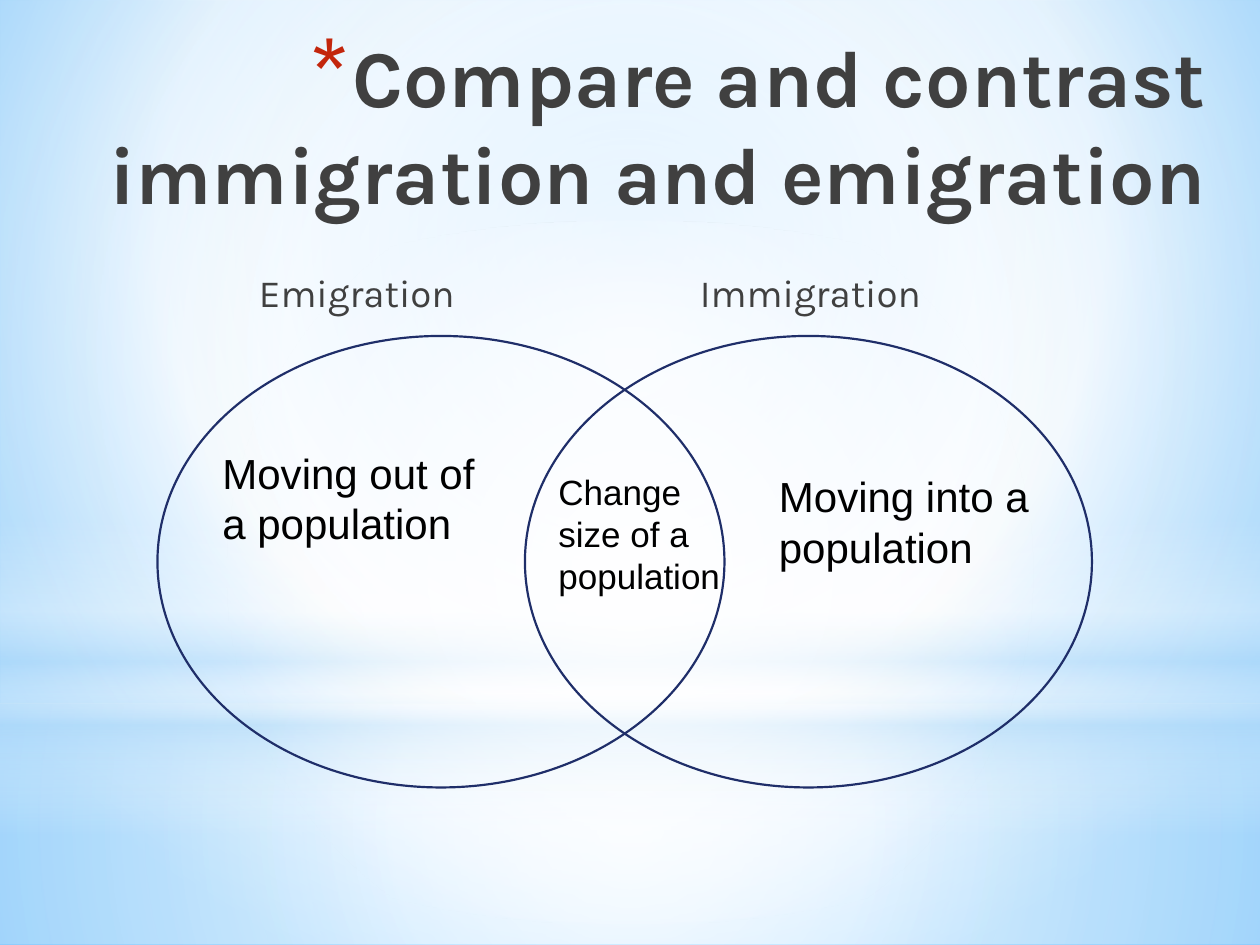
from lxml import etree
from pptx import Presentation
from pptx.dml.color import RGBColor
from pptx.enum import shapes, text
from pptx.oxml.ns import qn
from pptx.util import Pt

WHITE = RGBColor(0xFF, 0xFF, 0xFF)
SKY = RGBColor(0x9E, 0xD5, 0xFF)
BLUE = RGBColor(0x5B, 0xB9, 0xFF)
PALE = RGBColor(0xB4, 0xDC, 0xFA)
NAVY = RGBColor(0x1F, 0x2E, 0x69)
GRAY = RGBColor(0x40, 0x40, 0x40)
RED = RGBColor(0xC3, 0x26, 0x0C)
BLACK = RGBColor(0, 0, 0)

CENTER = (50, 50, 50, 50)


def child(parent, tag, **attributes):
    return etree.SubElement(parent, qn(tag), {k: str(v) for k, v in attributes.items()})


def set_gradient(properties, stops, focus=None):
    """Swap the solid fill for a gradient: round about focus, else top to bottom."""
    solid = properties.find(qn("a:solidFill"))
    gradient = etree.Element(qn("a:gradFill"), rotWithShape="1")
    stop_list = child(gradient, "a:gsLst")
    for position, color, opacity in stops:
        stop = child(stop_list, "a:gs", pos=position * 1000)
        color_element = child(stop, "a:srgbClr", val=color)
        if opacity < 100:
            child(color_element, "a:alpha", val=opacity * 1000)
    if focus:
        path = child(gradient, "a:path", path="circle")
        sides = {side: value * 1000 for side, value in zip("ltrb", focus)}
        child(path, "a:fillToRect", **sides)
    else:
        child(gradient, "a:lin", ang=90 * 60000, scaled=0)
    properties.replace(solid, gradient)


def add_glow(slide, kind, box, stops, focus=None):
    shape = slide.shapes.add_shape(kind, *map(Pt, box))
    shape.shadow.inherit = False
    shape.line.fill.background()
    shape.fill.solid()
    set_gradient(shape.element.spPr, stops, focus)


def add_text(slide, box, content, size, font, color, bold=False):
    shape = slide.shapes.add_textbox(*map(Pt, box))
    frame = shape.text_frame
    frame.word_wrap = True
    frame.text = content
    run_font = frame.paragraphs[0].runs[0].font
    run_font.size, run_font.name, run_font.bold = Pt(size), font, bold
    run_font.color.rgb = color
    return frame


def add_backdrop(slide, width, height):
    rectangle, oval = shapes.MSO_SHAPE.RECTANGLE, shapes.MSO_SHAPE.OVAL
    horizon = 402

    slide.background.fill.solid()
    background = slide.element.find(".//" + qn("p:bgPr"))
    set_gradient(background, [(0, SKY, 100), (60, WHITE, 100), (100, BLUE, 100)],
                 (20, 10, 20, 60))

    # Ground, sky, horizon band and central glow
    add_glow(slide, rectangle, (0, horizon, width, height - horizon),
             [(0, WHITE, 91), (37, WHITE, 76), (100, PALE, 79)], CENTER)
    add_glow(slide, rectangle, (0, 0, width, horizon),
             [(0, WHITE, 89), (48, WHITE, 62), (100, PALE, 79)], CENTER)
    add_glow(slide, rectangle, (0, 297, width, 180),
             [(0, WHITE, 0), (29, WHITE, 30), (45, PALE, 40),
              (55, WHITE, 26), (65, PALE, 60), (100, WHITE, 0)])
    add_glow(slide, oval, (0, 126, width, horizon),
             [(0, WHITE, 100), (56, WHITE, 0)], CENTER)


def add_title(slide, box):
    frame = add_text(slide, box, "Compare and contrast immigration and emigration",
                     46, "Karla", GRAY, bold=True)
    paragraph = frame.paragraphs[0]
    paragraph.alignment = text.PP_ALIGN.RIGHT
    # Red asterisk bullet on a hanging indent
    properties = paragraph._p.get_or_add_pPr()
    properties.set("marL", str(Pt(25)))
    properties.set("indent", str(Pt(-25)))
    child(child(properties, "a:buClr"), "a:srgbClr", val=RED)
    child(properties, "a:buSzPct", val=128000)
    child(properties, "a:buFont", typeface="Karla")
    child(properties, "a:buChar", char="*")


def add_venn(slide, left, top):
    circle_width, circle_height, step = 324, 258, 210

    # Overlapping circles
    for offset in (step, 0):
        circle = slide.shapes.add_shape(
            shapes.MSO_SHAPE.OVAL, Pt(left + offset), Pt(top),
            Pt(circle_width), Pt(circle_height))
        circle.shadow.inherit = False
        circle.fill.background()
        circle.line.color.rgb = NAVY
        circle.line.width = Pt(1.25)

    # Headings above the circles
    for label, offset, margin in (("Emigration", -54, 112), ("Immigration", 276, 34)):
        frame = add_text(slide, (left + offset, top - 42, 318, 333),
                         label, 22, "Karla", GRAY)
        frame.margin_left = Pt(margin)
        frame.paragraphs[0].space_before = Pt(4.4)
        frame.paragraphs[0].space_after = Pt(3)

    # Notes inside the regions
    for note, x, y, width, height, size in (
            ("Moving out of a population", 30, 60, 162, 65.5, 24),
            ("Moving into a population", 348, 73.5, 162, 65.5, 24),
            ("Change size of a population", 222, 73.5, 114, 80, 20)):
        add_text(slide, (left + x, top + y, width, height), note, size, "Arial", BLACK)


def main():
    presentation = Presentation()
    presentation.slide_width, presentation.slide_height = Pt(720), Pt(540)
    slide = presentation.slides.add_slide(presentation.slide_layouts[6])
    add_backdrop(slide, 720, 540)
    add_title(slide, (26, 12, 670, 90))
    add_venn(slide, 90, 192)
    presentation.save("out.pptx")


if __name__ == "__main__":
    main()
